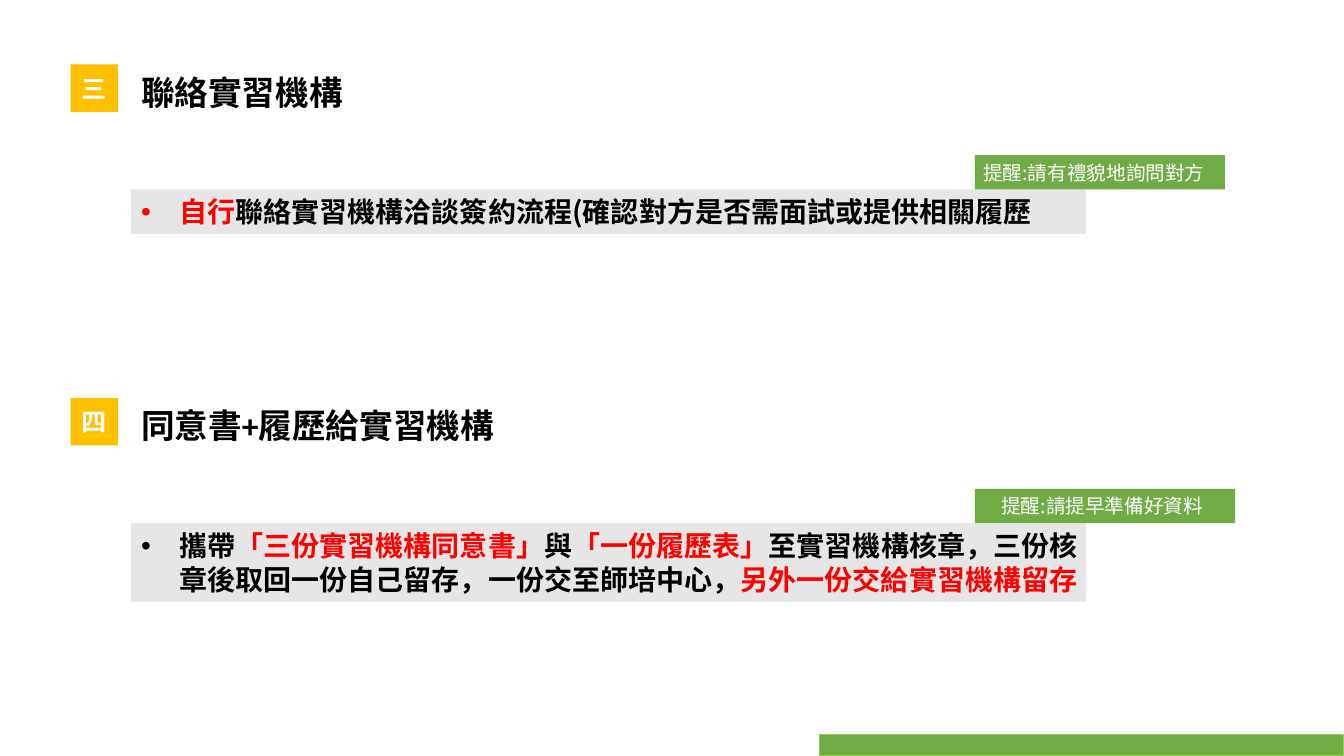
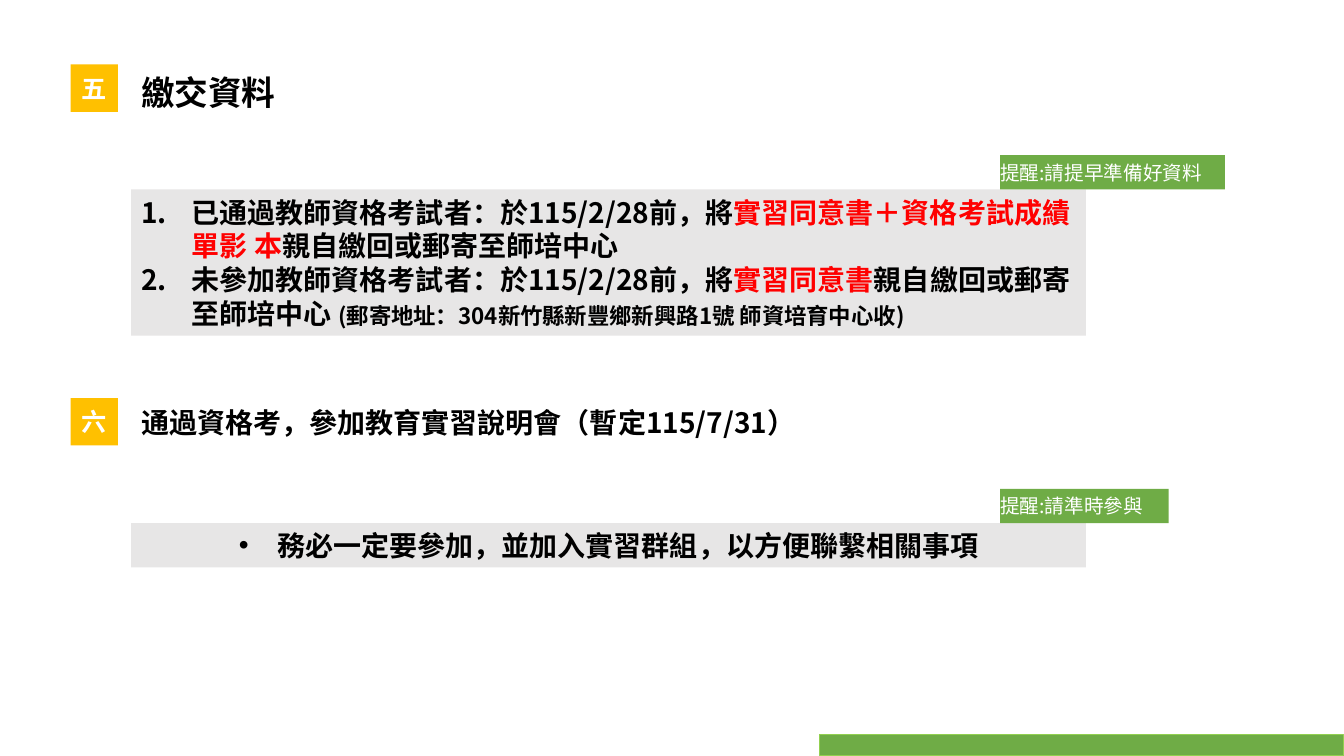
"""Build two slides listing the internship application steps three to six."""
from dataclasses import dataclass

from lxml import etree
from pptx import Presentation
from pptx import util as u
from pptx.dml.color import RGBColor
from pptx.enum import shapes, text
from pptx.oxml.ns import qn

EMU_PER_PX = 9144
SLIDE_WIDTH, SLIDE_HEIGHT = 1333, 750
SECTION_PITCH = 331
PANEL_LEFT, PANEL_TOP, PANEL_WIDTH = 130, 188, 947
TAG_HEIGHT = 34
PANEL_PADDING, LINE_HEIGHT = 11, 33.4
GREEN, LIME, AMBER, GRAY = "6FAC46", "92D050", "FFC000", "E7E6E6"
RED, BLACK, WHITE = "FF0000", "000000", "FFFFFF"
FONT, FONT_ALTERNATE = "Noto Sans CJK TC", "Noto Sans CJK SC"


@dataclass(frozen=True)
class Span:
    words: str
    color: str = BLACK
    size: int = 20
    font: str = FONT


@dataclass(frozen=True)
class Tag:
    words: str
    left: int
    width: int
    inset: int = 0


@dataclass(frozen=True)
class Section:
    number: str
    heading: tuple[Span, ...]
    tag: Tag
    items: tuple[tuple[Span, ...], ...]
    lines: int = 1
    numbered: bool = False
    heading_width: int = 353
    inset: int = 10


def px(length: float) -> u.Emu:
    return u.Emu(round(length * EMU_PER_PX))


def rgb(value: str) -> RGBColor:
    return RGBColor.from_string(value)


def place(shape, left: float, top: float, width: float, height: float) -> None:
    shape.left, shape.top, shape.width, shape.height = map(px, (left, top, width, height))


def set_frame(shape, *, left=0, right=0, anchor=text.MSO_ANCHOR.MIDDLE):
    frame = shape.text_frame
    frame.word_wrap = True
    frame.auto_size = text.MSO_AUTO_SIZE.NONE
    frame.vertical_anchor = anchor
    frame.margin_left, frame.margin_right = px(left), px(right)
    frame.margin_top = frame.margin_bottom = 0
    return frame


def add_run(paragraph, words: str, *, size=20, color=BLACK, bold=True, font=FONT) -> None:
    run = paragraph.add_run()
    run.text = words
    run.font.size = u.Pt(size)
    run.font.bold = bold
    run.font.color.rgb = rgb(color)
    run.font.name = font
    east_asian = etree.SubElement(run._r.get_or_add_rPr(), qn("a:ea"))
    east_asian.set("typeface", FONT)


def set_paragraph(paragraph, size: int, align=text.PP_ALIGN.LEFT) -> None:
    paragraph.alignment = align
    paragraph.space_before = u.Pt(0)
    paragraph.line_spacing = u.Pt(round(size * 1.2, 1))


def set_bullet(paragraph, numbered: bool) -> None:
    properties = paragraph._p.get_or_add_pPr()
    indent = px(50 if numbered else 38)
    properties.set("marL", str(indent))
    properties.set("indent", str(-indent))
    if numbered:
        etree.SubElement(properties, qn("a:buFont")).set("typeface", FONT)
        etree.SubElement(properties, qn("a:buAutoNum")).set("type", "arabicPeriod")
    else:
        etree.SubElement(properties, qn("a:buFont")).set("typeface", "Arial")
        etree.SubElement(properties, qn("a:buChar")).set("char", "•")


def add_box(slide, left: int, top: int, width: int, height: int, fill: str, line: str = ""):
    shape = slide.shapes.add_shape(
        shapes.MSO_SHAPE.RECTANGLE, px(left), px(top), px(width), px(height))
    shape.shadow.inherit = False
    shape.fill.solid()
    shape.fill.fore_color.rgb = rgb(fill)
    if line:
        shape.line.color.rgb = rgb(line)
        shape.line.width = u.Pt(0.72)
    else:
        shape.line.fill.background()
    return shape


def add_badge(slide, number: str, offset: int) -> None:
    badge = add_box(slide, 70, 64 + offset, 47, 47, AMBER)
    paragraph = set_frame(badge).paragraphs[0]
    set_paragraph(paragraph, 18, text.PP_ALIGN.CENTER)
    add_run(paragraph, number, size=18, color=WHITE)


def add_tag(slide, tag: Tag, offset: int) -> None:
    shape = add_box(slide, tag.left, PANEL_TOP - TAG_HEIGHT + offset, tag.width, TAG_HEIGHT, GREEN)
    paragraph = set_frame(shape, left=tag.inset).paragraphs[0]
    set_paragraph(paragraph, 14)
    add_run(paragraph, tag.words, size=14, color=WHITE, bold=False)


def fill_heading(shape, section: Section, offset: int) -> None:
    place(shape, 140, 71 + offset, section.heading_width, 43)
    paragraph = set_frame(shape, anchor=text.MSO_ANCHOR.TOP).paragraphs[0]
    set_paragraph(paragraph, section.heading[0].size)
    for span in section.heading:
        add_run(paragraph, span.words, size=span.size, color=span.color, font=span.font)


def fill_panel(shape, section: Section, offset: int) -> None:
    height = round(section.lines * LINE_HEIGHT + PANEL_PADDING)
    place(shape, PANEL_LEFT, PANEL_TOP + offset, PANEL_WIDTH, height)
    shape.fill.solid()
    shape.fill.fore_color.rgb = rgb(GRAY)
    frame = set_frame(shape, left=section.inset, right=5)
    for index, item in enumerate(section.items):
        paragraph = frame.add_paragraph() if index else frame.paragraphs[0]
        set_bullet(paragraph, section.numbered)
        set_paragraph(paragraph, 20)
        for span in item:
            add_run(paragraph, span.words, size=span.size, color=span.color, font=span.font)


def add_slide(presentation, sections: tuple[Section, ...]) -> None:
    slide = presentation.slides.add_slide(presentation.slide_layouts[3])
    title, *panels = slide.placeholders
    add_box(slide, 813, 729, SLIDE_WIDTH - 813, SLIDE_HEIGHT - 729, GREEN, LIME)
    for index, (section, panel) in enumerate(zip(sections, panels)):
        offset = index * SECTION_PITCH
        heading = slide.shapes.add_textbox(0, 0, 0, 0) if index else title
        add_badge(slide, section.number, offset)
        fill_heading(heading, section, offset)
        fill_panel(panel, section, offset)
        add_tag(slide, section.tag, offset)


SLIDES = (
    (
        Section(
            "三", (Span("聯絡實習機構", size=24),),
            Tag("提醒:請有禮貌地詢問對方", 967, 248, 8),
            ((Span("自行", RED), Span("聯絡實習機構洽談簽約流程(確認對方是否需面試或提供相關履歷")),),
        ),
        Section(
            "四",
            (Span("同意書", size=24), Span("+", size=24, font="Calibri"),
             Span("履歷給實習機構", size=24)),
            Tag("提醒:請提早準備好資料", 967, 258, 26),
            ((Span("攜帶"), Span("「三份實習機構同意書」", RED), Span("與"),
              Span("「一份履歷表」", RED),
              Span("至實習機構核章，三份核章後取回一份自己留存，一份交至師培中心，"),
              Span("另外一份交給實習機構留存", RED)),),
            lines=2,
        ),
    ),
    (
        Section(
            "五", (Span("繳交資料", size=24),),
            Tag("提醒:請提早準備好資料", 992, 223),
            ((Span("已通過教師資格考試者：於115/2/28前，將"),
              Span("實習同意書＋資格考試成績單影 本", RED), Span("親自繳回或郵寄至師培中心")),
             (Span("未參加教師資格考試者：於115/2/28前，將"), Span("實習同意書", RED),
              Span("親自繳回或郵寄至師培中心 "),
              Span("(郵寄地址：304新竹縣新豐鄉新興路1號 師資培育中心收)",
                   size=16, font=FONT_ALTERNATE))),
            lines=4, numbered=True,
        ),
        Section(
            "六",
            (Span("通過資格考，參加教育實習說明會（暫定115/7/31）", font=FONT_ALTERNATE),),
            Tag("提醒:請準時參與", 992, 167),
            ((Span("務必一定要參加，並加入實習群組，以方便聯繫相關事項"),),),
            heading_width=701, inset=107,
        ),
    ),
)


def main() -> None:
    presentation = Presentation()
    presentation.slide_width, presentation.slide_height = px(SLIDE_WIDTH), px(SLIDE_HEIGHT)
    for sections in SLIDES:
        add_slide(presentation, sections)
    presentation.save("out.pptx")


if __name__ == "__main__":
    main()
